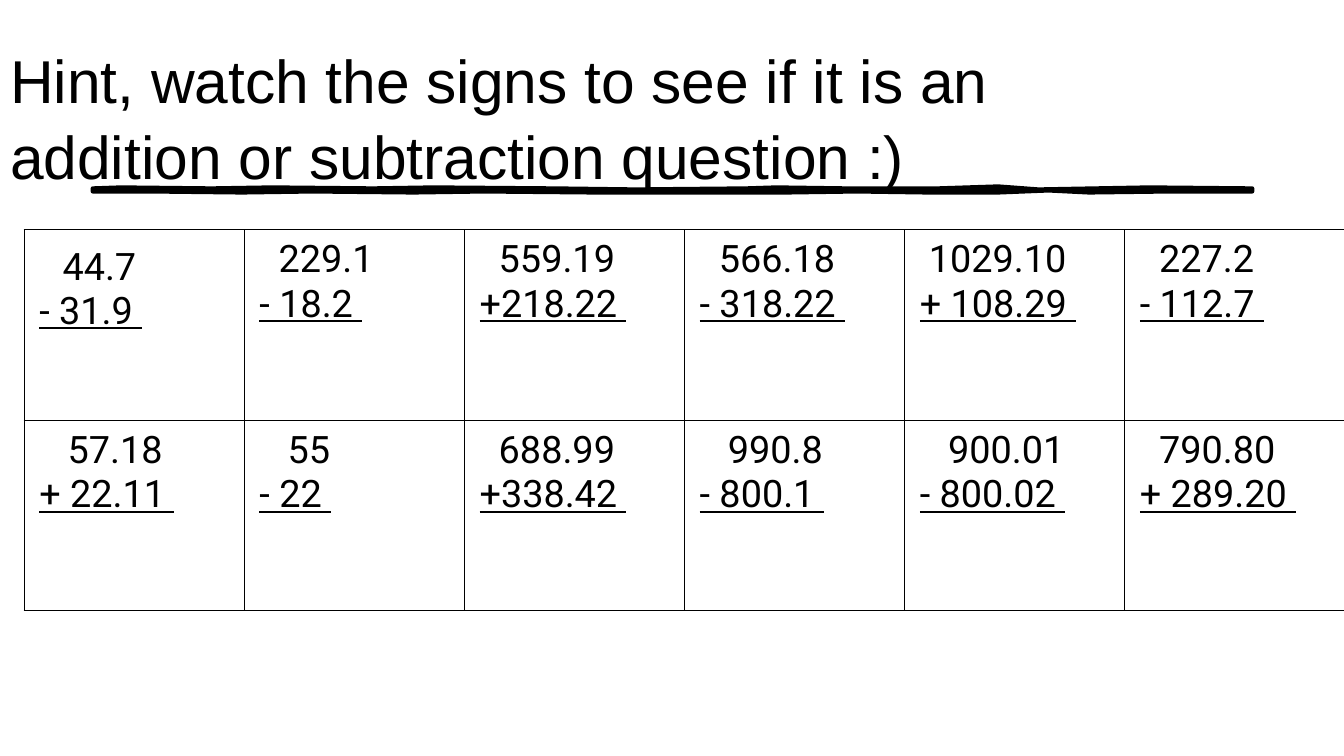
"""Build a worksheet slide of twelve decimal addition and subtraction questions."""
from dataclasses import dataclass

from lxml.etree import SubElement
from pptx import Presentation
from pptx.dml.color import RGBColor
from pptx.enum.text import MSO_ANCHOR as Anchor, MSO_AUTO_SIZE as AutoSize, PP_ALIGN as Align
from pptx.oxml.ns import qn
from pptx.util import Inches, Pt


@dataclass(frozen=True)
class Theme:
    ink: RGBColor = RGBColor(0, 0, 0)
    title_font: str = "Arial"
    title_size: float = 43.2
    sum_font: str = "Roboto"
    sum_size: float = 27
    stroke: float = 3
    border: float = 1


theme = Theme()


def write(para, text, *, font, size, underline=False, indent=0.0, spacing=1.0):
    para.alignment = Align.LEFT
    para.line_spacing = spacing
    if indent:
        properties = para._p.get_or_add_pPr()
        properties.set("marL", str(Inches(indent)))
        properties.set("indent", "0")
    span = para.add_run()
    span.text = text
    span.font.name = font
    span.font.size = Pt(size)
    span.font.underline = underline
    span.font.color.rgb = theme.ink


def outline(cell):
    properties = cell._tc.get_or_add_tcPr()
    for side in ("lnL", "lnR", "lnT", "lnB"):
        edge = SubElement(properties, qn(f"a:{side}"), w=str(Pt(theme.border)))
        fill = SubElement(edge, qn("a:solidFill"))
        SubElement(fill, qn("a:srgbClr"), val=str(theme.ink))
    cell.fill.background()


deck = Presentation()
deck.slide_width, deck.slide_height = Inches(13.33), Inches(7.5)
page = deck.slides.add_slide(deck.slide_layouts[5])

top_edge = [(0.92, 1.87), (1.2, 1.86), (2.1, 1.87), (2.7, 1.86), (3.7, 1.87),
            (4.3, 1.86), (5.5, 1.87), (6.3, 1.88), (7.4, 1.87), (7.7, 1.86),
            (8.4, 1.87), (9.3, 1.87), (9.9, 1.85), (10.3, 1.88), (11.4, 1.86),
            (12.42, 1.87)]
bottom_edge = [(12.42, 1.9), (11.6, 1.9), (10.8, 1.91), (10.4, 1.89), (9.9, 1.91),
               (9.2, 1.91), (8.5, 1.9), (7.8, 1.91), (6.8, 1.91), (5.9, 1.91),
               (4.8, 1.9), (4.1, 1.91), (3.1, 1.9), (2.4, 1.91), (1.5, 1.9),
               (0.92, 1.9)]
points = [(Inches(x), Inches(y)) for x, y in top_edge + bottom_edge]
builder = page.shapes.build_freeform(*points[0])
builder.add_line_segments(points[1:], close=True)
underline = builder.convert_to_shape()
underline.shadow.inherit = False
underline.fill.solid()
underline.fill.fore_color.rgb = theme.ink
underline.line.color.rgb = theme.ink
underline.line.width = Pt(theme.stroke)

title = page.shapes.title
title.left, title.top = Inches(0), Inches(0.42)
title.width, title.height = Inches(11.5), Inches(1.45)
box = title.text_frame
box.word_wrap = True
box.auto_size = AutoSize.NONE
box.vertical_anchor = Anchor.MIDDLE
write(box.paragraphs[0],
      "Hint, watch the signs to see if it is an addition or subtraction question :)",
      font=theme.title_font, size=theme.title_size, spacing=1.05)

questions = [
    [("44.7", 0.23, "- 31.9 "), ("229.1", 0.19, "- 18.2 "),
     ("559.19", 0.19, "+218.22 "), ("566.18", 0.19, "- 318.22 "),
     ("1029.10", 0.09, "+ 108.29 "), ("227.2", 0.19, "- 112.7 ")],
    [("57.18", 0.28, "+ 22.11 "), ("55", 0.28, "- 22 "),
     ("688.99", 0.19, "+338.42 "), ("990.8", 0.28, "- 800.1 "),
     ("900.01", 0.28, "- 800.02 "), ("790.80", 0.19, "+ 289.20 ")],
]
grid = page.shapes.add_table(len(questions), len(questions[0]), Inches(0.24), Inches(2.28),
                             Inches(13.1), Inches(3.78)).table
grid.first_row = False
grid.horz_banding = False
for row, row_questions in enumerate(questions):
    for column, (first, indent, second) in enumerate(row_questions):
        cell = grid.cell(row, column)
        outline(cell)
        cell.margin_left = cell.margin_right = Inches(0.15)
        cell.margin_top = cell.margin_bottom = Inches(0.08)
        box = cell.text_frame
        write(box.paragraphs[0], first, font=theme.sum_font, size=theme.sum_size, indent=indent)
        write(box.add_paragraph(), second, font=theme.sum_font, size=theme.sum_size,
              underline=True)
grid.cell(0, 0).margin_top = Inches(0.15)

deck.save("out.pptx")
